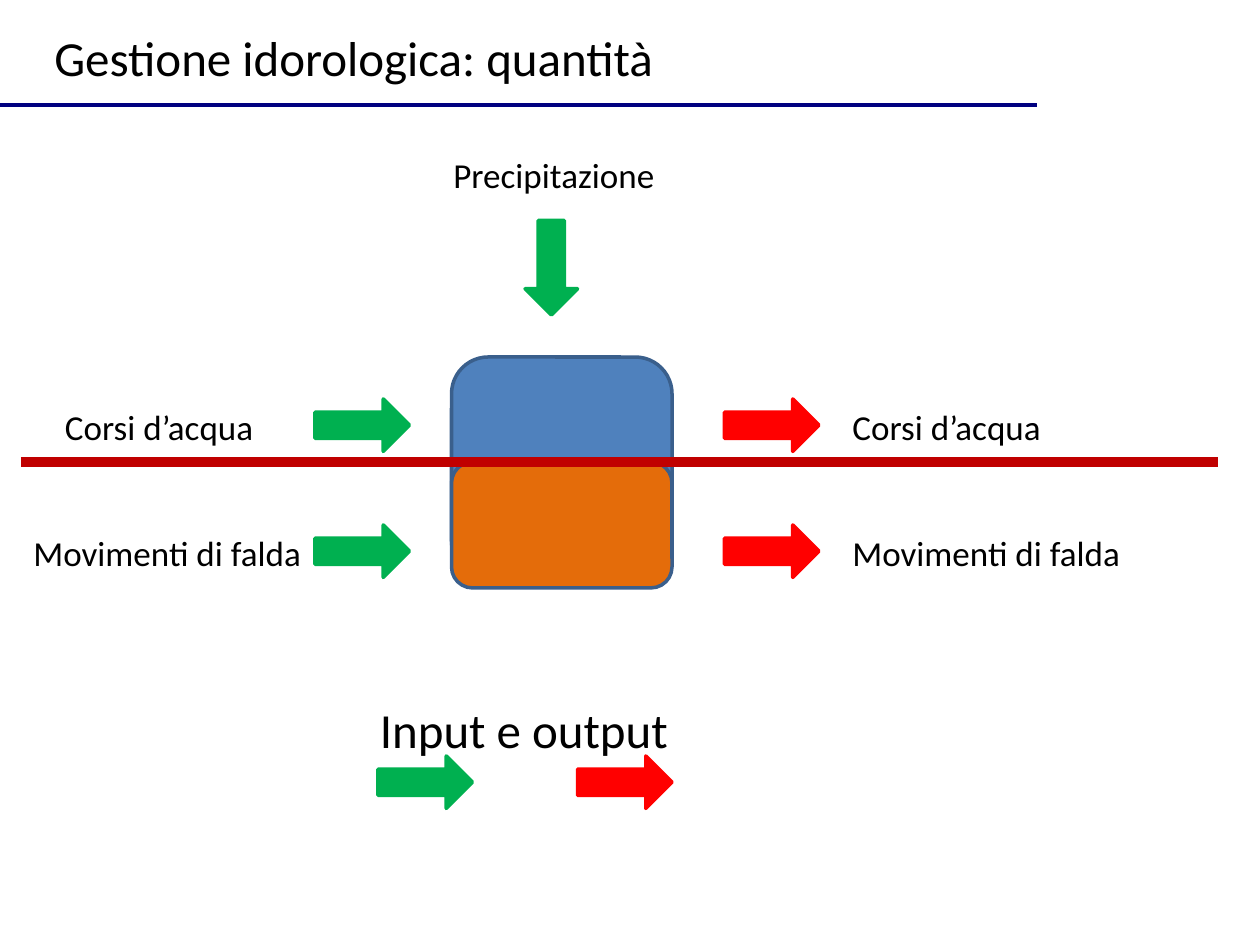
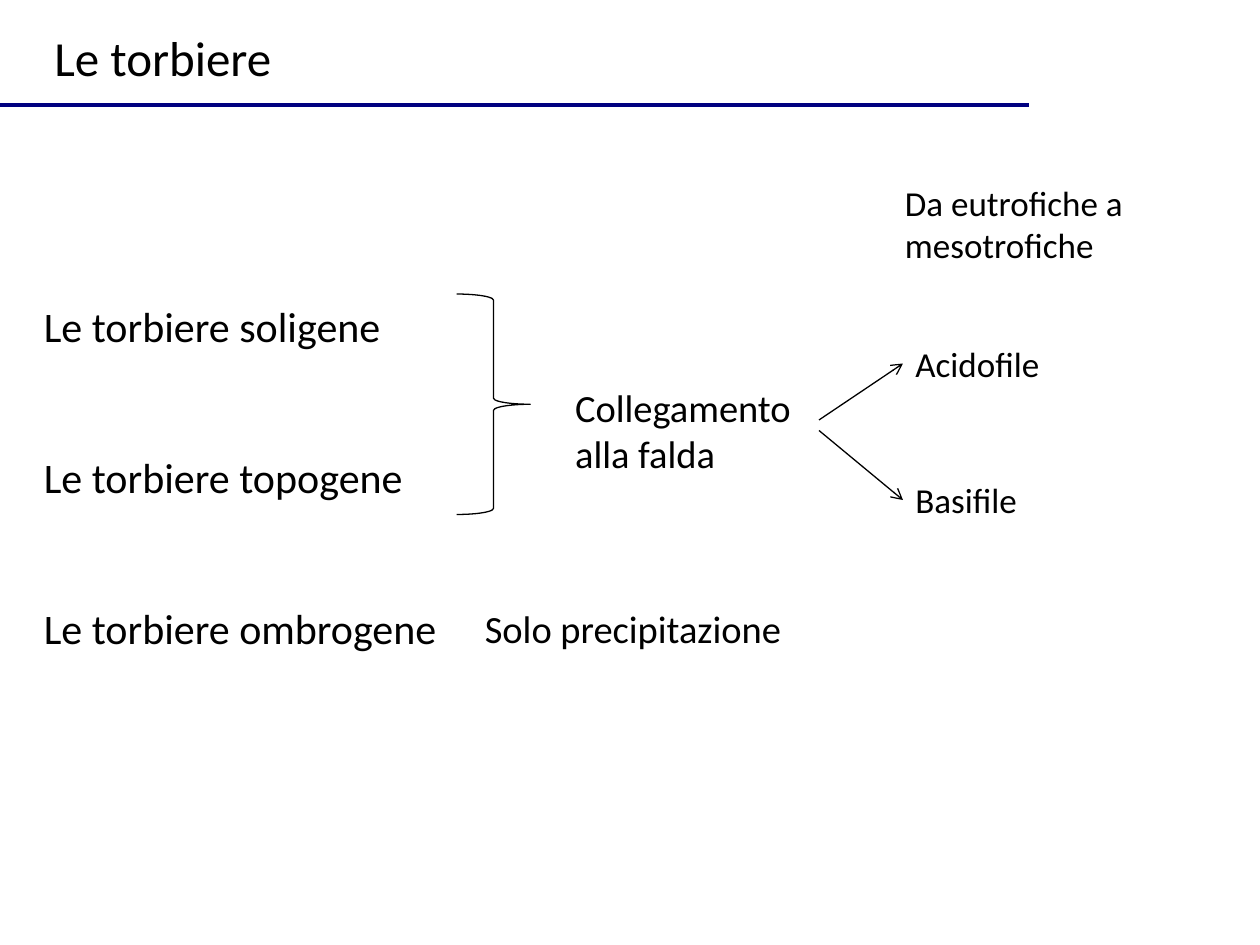
from dataclasses import dataclass

import lxml.etree
import pptx
import pptx.dml.color
import pptx.enum.shapes
import pptx.oxml.ns
import pptx.util

SHAPE = pptx.enum.shapes.MSO_SHAPE
STRAIGHT = pptx.enum.shapes.MSO_CONNECTOR.STRAIGHT

# The slide is a grid of 120 columns by 90 rows.
CELL = 1 / 12
FONT = "Calibri"
BLACK, NAVY = "000000", "000080"
INPUT_GREEN, OUTPUT_RED = "00B050", "FF0000"
WATER_BLUE, SOIL_ORANGE, BLOCK_EDGE = "4F81BD", "E46C0A", "3A5F8C"
GROUND_RED = "C00000"
TITLE_SIZE, HEADING_SIZE, NOTE_SIZE, LABEL_SIZE = 28, 24, 22, 20


@dataclass(frozen=True)
class Label:
    text: str
    col: float
    row: float
    cols: float
    rows: float = 5.25
    size: int = LABEL_SIZE
    gap: float = 0


@dataclass(frozen=True)
class FlowArrow:
    col: float
    row: float
    color: str
    rotation: int = 0


@dataclass(frozen=True)
class Block:
    row: float
    rows: float
    fill: str


FLOW_LABELS = [
    Label("Precipitazione", 42, 14, 24),
    Label("Corsi d’acqua", 5, 38, 34),
    Label("Movimenti di falda", 2, 50, 30),
    Label("Corsi d’acqua", 80, 38, 34),
    Label("Movimenti di falda", 80, 50, 30),
    Label("Input e output", 35, 66, 36, 6.8, TITLE_SIZE),
]
FLOW_ARROWS = [
    FlowArrow(48, 23, INPUT_GREEN, 90),
    *(FlowArrow(col, row, color)
      for col, color in ((30, INPUT_GREEN), (69, OUTPUT_RED))
      for row in (38, 50)),
    FlowArrow(36, 72, INPUT_GREEN),
    FlowArrow(55, 72, OUTPUT_RED),
]
BLOCKS = [Block(34, 21, WATER_BLUE), Block(44, 12, SOIL_ORANGE)]

BOG_LABELS = [
    Label("Le torbiere soligene\nLe torbiere topogene\nLe torbiere ombrogene",
          3, 28, 47, 40, HEADING_SIZE, gap=57.5),
    Label("Collegamento\nalla falda", 53.6, 36, 26.4, 10, NOTE_SIZE),
    Label("Da eutrofiche a mesotrofiche", 85, 16.7, 26, 9.3),
    Label("Solo precipitazione", 45, 57, 41, 5.6, NOTE_SIZE),
]
# Each kind of bog with the row where its arrow starts.
BOG_KINDS = [(Label("Acidofile", 86, 32, 18), 40), (Label("Basifile", 86, 45, 14), 41)]


def grid(cells: float) -> pptx.util.Length:
    return pptx.util.Inches(cells * CELL)


def rgb(color: str) -> pptx.dml.color.RGBColor:
    return pptx.dml.color.RGBColor.from_string(color)


def add_label(slide, label: Label):
    box = slide.shapes.add_textbox(*map(grid, (label.col, label.row, label.cols, label.rows)))
    frame = box.text_frame
    frame.word_wrap = True
    frame.text = label.text
    for index, paragraph in enumerate(frame.paragraphs):
        paragraph.font.name = FONT
        paragraph.font.size = pptx.util.Pt(label.size)
        paragraph.font.color.rgb = rgb(BLACK)
        if index and label.gap:
            paragraph.space_before = pptx.util.Pt(label.gap)
    return box


def add_figure(slide, kind, col: float, row: float, cols: float, rows: float,
               edge: str, fill: str = "", width: float = 2):
    figure = slide.shapes.add_shape(kind, *map(grid, (col, row, cols, rows)))
    figure.shadow.inherit = False
    if fill:
        figure.fill.solid()
        figure.fill.fore_color.rgb = rgb(fill)
    else:
        figure.fill.background()
    figure.line.color.rgb = rgb(edge)
    figure.line.width = pptx.util.Pt(width)
    return figure


def add_line(slide, start: tuple[float, float], end: tuple[float, float],
             color: str, width: float, arrow: bool = False):
    line = slide.shapes.add_connector(STRAIGHT, *map(grid, (*start, *end)))
    line.line.color.rgb = rgb(color)
    line.line.width = pptx.util.Pt(width)
    qn = pptx.oxml.ns.qn
    properties = line._element.spPr
    if arrow:
        lxml.etree.SubElement(properties.find(qn("a:ln")), qn("a:tailEnd"), type="arrow")
    lxml.etree.SubElement(properties, qn("a:effectLst"))
    return line


def add_titled_slide(deck, title: str, rule_end: float):
    slide = deck.slides.add_slide(deck.slide_layouts[6])
    add_label(slide, Label(title, 4, 2, 73, 6.8, TITLE_SIZE))
    add_line(slide, (0, 10), (rule_end, 10), NAVY, 2)
    return slide


def add_water_balance(deck) -> None:
    slide = add_titled_slide(deck, "Gestione idorologica: quantità", 98.8)
    for label in FLOW_LABELS:
        add_label(slide, label)
    for flow in FLOW_ARROWS:
        arrow = add_figure(slide, SHAPE.RIGHT_ARROW, flow.col, flow.row, 9, 5,
                           flow.color, flow.color)
        arrow.rotation = flow.rotation
    for block in BLOCKS:
        add_figure(slide, SHAPE.ROUNDED_RECTANGLE, 43, block.row, 21, block.rows,
                   BLOCK_EDGE, block.fill)
    add_line(slide, (2, 44), (116, 44), GROUND_RED, 6.25)


def add_bogs(deck) -> None:
    slide = add_titled_slide(deck, "Le torbiere", 98)
    for label in BOG_LABELS:
        add_label(slide, label)
    add_figure(slide, SHAPE.RIGHT_BRACE, 43.5, 28, 7, 21, BLACK, width=0.75)
    for kind, start_row in BOG_KINDS:
        kind_box = add_label(slide, kind)
        arrow = add_line(slide, (78, start_row), (kind.col, kind.row + kind.rows / 2),
                         BLACK, 0.75, arrow=True)
        arrow.end_connect(kind_box, 1)


def main() -> None:
    deck = pptx.Presentation()
    deck.slide_width, deck.slide_height = grid(120), grid(90)
    add_water_balance(deck)
    add_bogs(deck)
    deck.save("out.pptx")


if __name__ == "__main__":
    main()
